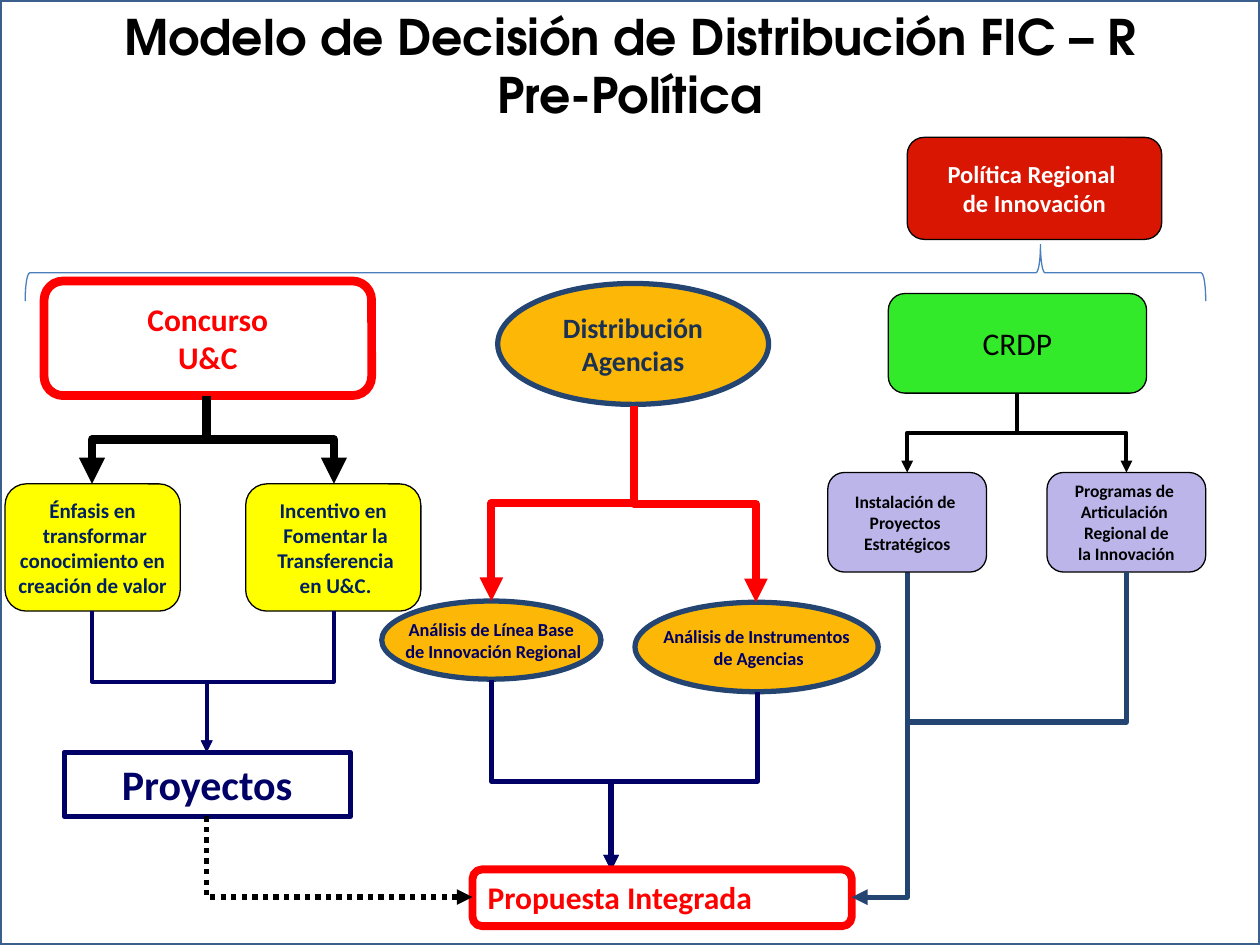
from lxml.etree import SubElement
from pptx import Presentation
from pptx.dml.color import RGBColor
from pptx.enum.dml import MSO_LINE
from pptx.enum.shapes import MSO_CONNECTOR, MSO_SHAPE
from pptx.enum.text import MSO_ANCHOR, MSO_AUTO_SIZE, PP_ALIGN
from pptx.oxml.ns import qn
from pptx.util import Inches, Pt

COLORS = {
    "white": "FFFFFF", "black": "000000", "red": "FF0000", "dark red": "D81602",
    "green": "33EA2A", "orange": "FDB707", "yellow": "FFFF00", "lilac": "BCB5E9",
    "steel": "244472", "navy": "000066", "ink": "1A3152", "deep blue": "002060",
    "frame": "3A5F8C", "brace": "4B7EBC",
}


def color(name):
    return RGBColor.from_string(COLORS[name])


def write(shape, lines, size, ink, bold=True, font="Calibri", align=PP_ALIGN.CENTER,
          wrap=False, anchor=MSO_ANCHOR.MIDDLE):
    frame = shape.text_frame
    frame.word_wrap = wrap
    frame.vertical_anchor = anchor
    frame.text = "\n".join(lines)
    for para in frame.paragraphs:
        para.alignment = align
        para.font.name = font
        para.font.size = Pt(size)
        para.font.bold = bold
        para.font.color.rgb = color(ink)


def add_box(page, kind, place, fill, line, weight):
    """Add a preset shape at (left, top, width, height); fill None leaves it open."""
    box = page.shapes.add_shape(kind, *map(Inches, place))
    box.shadow.inherit = False
    if fill:
        box.fill.solid()
        box.fill.fore_color.rgb = color(fill)
    else:
        box.fill.background()
    box.line.color.rgb = color(line)
    box.line.width = Pt(weight)
    return box


def add_rounded(page, place, fill, lines, size, ink, line="black", weight=0.75, bold=True):
    box = add_box(page, MSO_SHAPE.ROUNDED_RECTANGLE, place, fill, line, weight)
    write(box, lines, size, ink, bold)


def add_ellipse(page, place, lines, size, ink):
    box = add_box(page, MSO_SHAPE.OVAL, place, "orange", "steel", 3)
    write(box, lines, size, ink)


def add_elbow(page, start, end, line, weight, bend=0.5, arrow=True, dash=None):
    """Connector that leaves start vertically; bend None makes a single corner."""
    (x1, y1), (x2, y2) = start, end
    run, rise = abs(y2 - y1), abs(x2 - x1)
    left, top = (x1 + x2 - run) / 2, (y1 + y2 - rise) / 2
    elbow = page.shapes.add_connector(
        MSO_CONNECTOR.ELBOW, Inches(left), Inches(top), Inches(left + run), Inches(top + rise))
    elbow.line.color.rgb = color(line)
    elbow.line.width = Pt(weight)
    if dash:
        elbow.line.dash_style = dash
    properties = elbow._element.spPr
    frame = properties.find(qn("a:xfrm"))
    if x2 > x1:
        frame.set("rot", str(270 * 60000))
        frame.set("flipH", "1")
    else:
        frame.set("rot", str(90 * 60000))
    geometry = properties.find(qn("a:prstGeom"))
    if bend is None:
        geometry.set("prst", "bentConnector2")
    else:
        guides = geometry.find(qn("a:avLst"))
        if guides is None:
            guides = SubElement(geometry, qn("a:avLst"))
        SubElement(guides, qn("a:gd"), name="adj1", fmla=f"val {round(bend * 100000)}")
    if arrow:
        SubElement(properties.find(qn("a:ln")), qn("a:tailEnd"), type="triangle")
    SubElement(properties, qn("a:effectLst"))


def add_title(page):
    add_box(page, MSO_SHAPE.RECTANGLE, (0, 0, 10, 7.5), "white", "frame", 2)
    title = page.shapes.add_textbox(*map(Inches, (0, 0.2, 10, 0.63)))
    write(title, ["Modelo de Decisión de Distribución FIC – R", "Pre-Política"],
          28, "black", font="TeX Gyre Adventor", wrap=True)


def add_agencies(page):
    add_ellipse(page, (3.95, 2.25, 2.15, 0.96), ["Distribución", "Agencias"], 16, "ink")
    add_ellipse(page, (3.03, 4.77, 1.74, 0.62),
                ["Análisis de Línea Base", " de Innovación Regional"], 10.5, "navy")
    add_ellipse(page, (5.04, 4.78, 1.93, 0.71),
                ["Análisis de Instrumentos", " de Agencias"], 10.5, "navy")
    for end in ((3.9, 4.77), (6, 4.78)):
        add_elbow(page, (5.03, 3.22), end, "red", 4.5)
    add_elbow(page, (3.9, 5.4), (4.85, 6.91), "navy", 3, bend=0.53)
    add_elbow(page, (6.01, 5.49), (4.85, 6.91), "navy", 3)


def add_contest(page):
    add_rounded(page, (0.35, 2.23, 2.6, 0.91), "white", ["Concurso", "U&C"], 18, "red",
                line="red", weight=5)
    goals = (
        (0.04, 0.73, ["Énfasis en", " transformar", " conocimiento en ", "creación de valor"]),
        (1.95, 2.65, ["Incentivo en", " Fomentar la", " Transferencia", " en U&C."]),
    )
    for left, center, lines in goals:
        add_rounded(page, (left, 3.84, 1.39, 1.01), "yellow", lines, 12, "deep blue")
        add_elbow(page, (1.64, 3.14), (center, 3.84), "black", 5)
        add_elbow(page, (center, 4.85), (1.64, 5.97), "navy", 2.25)
    projects = add_box(page, MSO_SHAPE.RECTANGLE, (0.51, 5.97, 2.27, 0.51), None, "navy", 3)
    write(projects, ["Proyectos"], 24, "navy", wrap=True, anchor=MSO_ANCHOR.TOP)
    projects.text_frame.auto_size = MSO_AUTO_SIZE.SHAPE_TO_FIT_TEXT


def add_proposal(page):
    proposal = add_box(page, MSO_SHAPE.FLOWCHART_ALTERNATE_PROCESS,
                       (3.75, 6.9, 3.01, 0.45), None, "red", 4.5)
    write(proposal, ["Propuesta Integrada"], 18, "red", align=PP_ALIGN.LEFT,
          anchor=MSO_ANCHOR.TOP)
    proposal.text_frame.auto_size = MSO_AUTO_SIZE.SHAPE_TO_FIT_TEXT
    add_elbow(page, (1.64, 6.48), (3.75, 7.12), "black", 3, bend=None,
              dash=MSO_LINE.ROUND_DOT)
    add_elbow(page, (7.2, 4.54), (6.76, 7.12), "steel", 3, bend=None)


def add_regional_council(page):
    add_rounded(page, (7.05, 2.33, 2.05, 0.79), "green", ["CRDP"], 18, "black", bold=False)
    programs = (
        (6.57, ["Instalación de ", "Proyectos ", "Estratégicos"]),
        (8.31, ["Programas de ", "Articulación ", "Regional de", " la Innovación "]),
    )
    for left, lines in programs:
        add_rounded(page, (left, 3.75, 1.26, 0.79), "lilac", lines, 10, "black")
        add_elbow(page, (8.07, 3.12), (left + 0.63, 3.75), "black", 2.25)
    add_elbow(page, (8.94, 4.54), (7.2, 5.73), "steel", 3, bend=None, arrow=False)


def add_policy(page):
    add_rounded(page, (7.2, 1.09, 2.02, 0.81), "dark red",
                ["Política Regional ", "de Innovación"], 14, "white")
    brace = add_box(page, MSO_SHAPE.RIGHT_BRACE, (4.66, -2.52, 0.45, 9.37),
                    None, "brace", 0.75)
    brace.rotation = 270
    brace.adjustments[0] = 0.08
    brace.adjustments[1] = 0.86


def main():
    deck = Presentation()
    deck.slide_width, deck.slide_height = Inches(10), Inches(7.5)
    page = deck.slides.add_slide(deck.slide_layouts[6])
    add_title(page)
    add_agencies(page)
    add_contest(page)
    add_proposal(page)
    add_regional_council(page)
    add_policy(page)
    deck.save("out.pptx")


if __name__ == "__main__":
    main()
